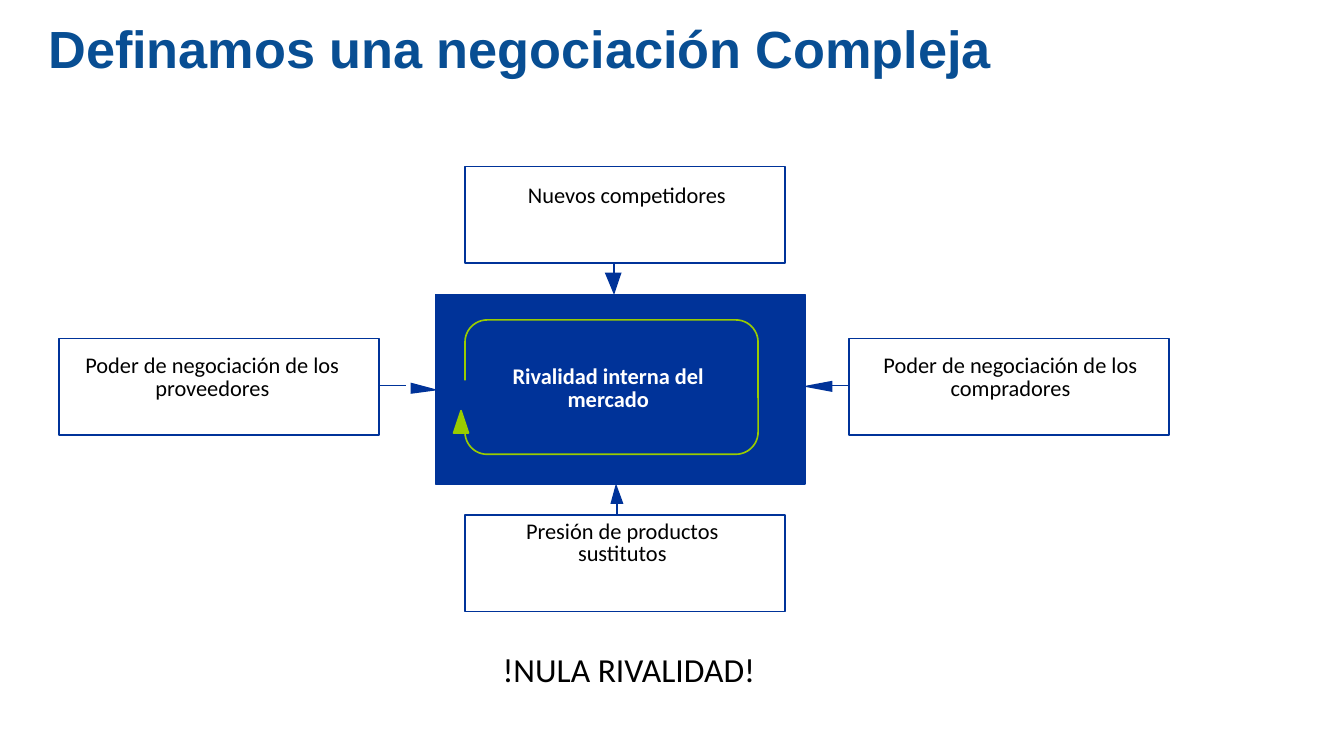
from lxml import etree
from pptx import Presentation
from pptx.dml.color import RGBColor
from pptx.enum import shapes, text
from pptx.oxml import ns
from pptx.util import Pt

NAVY = RGBColor(0x00, 0x33, 0x99)
TITLE_BLUE = RGBColor(0x08, 0x4E, 0x93)
LIME = RGBColor(0x99, 0xCC, 0x00)
WHITE = RGBColor(0xFF, 0xFF, 0xFF)
BLACK = RGBColor(0, 0, 0)
LINE_WIDTH = 0.88

TITLE = "Definamos una negociación Compleja"
CONCLUSION = "!NULA RIVALIDAD!"
CORE = (233.3, 157.7, 198, 101.5)
LOOP = (249.1, 171.4, 157, 72)
LOOP_GAP = (243.4, 203.8, 10.8, 23.8)
LOOP_HEAD = [(247, 220.3), (251.3, 231.8), (242.6, 231.8)]

FORCE_SIZE = (171.4, 51.8)
FORCES = [  # left and top of each box
    (31.7, 181.4),
    (455, 181.4),
    (249.1, 275.8),
    (249.1, 89.3),
]
LABELS = [  # wording, frame, line spacing, colour, bold
    ("Nuevos competidores", (263.5, 97.2, 144.7, 14.4), None, BLACK, False),
    ("Rivalidad interna del mercado", (257.8, 196.6, 136.1, 24.5), 12, WHITE, True),
    ("Presión de productos sustitutos", (257.8, 279.4, 151.2, 24.5), 12, BLACK, False),
    ("Poder de negociación de los proveedores", (38.2, 190.8, 151.2, 24.5), 12, BLACK, False),
    ("Poder de negociación de los compradores", (469.4, 190.8, 144, 24.5), 12, BLACK, False),
]
ARROWS = [  # triangle with its tip first, then the two ends of the shaft
    ([(235.4, 208.8), (220.3, 211.3), (220.3, 205.2)], (203, 206.6), (217.4, 206.6)),
    ([(329, 157.7), (324.2, 146.2), (332.8, 146.2)], (329, 140.4), (329, 146.2)),
    ([(430, 206.6), (445.7, 203.8), (445.7, 209.5)], (455, 206.6), (445.7, 206.6)),
    ([(330.5, 258.7), (334.1, 270), (326.9, 270)], (330.5, 275.2), (330.5, 270)),
]


def paint(shape, fill=None, line=None):
    shape.shadow.inherit = False
    if fill is None:
        shape.fill.background()
    else:
        shape.fill.solid()
        shape.fill.fore_color.rgb = fill
    if line is None:
        shape.line.fill.background()
    else:
        shape.line.color.rgb = line
        shape.line.width = Pt(LINE_WIDTH)


def add_box(page, frame, fill=None, line=None, kind=shapes.MSO_SHAPE.RECTANGLE):
    box = page.shapes.add_shape(kind, *map(Pt, frame))
    paint(box, fill, line)
    return box


def add_triangle(page, points, fill, line=None):
    builder = page.shapes.build_freeform(*points[0], scale=Pt(1))
    builder.add_line_segments(points[1:], close=True)
    paint(builder.convert_to_shape(), fill, line)


def add_shaft(page, start, end):
    shaft = page.shapes.add_connector(
        shapes.MSO_CONNECTOR.STRAIGHT, *map(Pt, start + end))
    shaft.line.color.rgb = NAVY
    shaft.line.width = Pt(LINE_WIDTH)
    etree.SubElement(shaft._element.spPr, ns.qn("a:effectLst"))


def add_text(page, wording, frame, size, color, font="Calibri", bold=False,
             spacing=None, align=text.PP_ALIGN.CENTER, inset=0,
             anchor=text.MSO_ANCHOR.TOP):
    body = page.shapes.add_textbox(*map(Pt, frame)).text_frame
    body.word_wrap = True
    body.vertical_anchor = anchor
    body.margin_left = body.margin_right = Pt(2 * inset)
    body.margin_top = body.margin_bottom = Pt(inset)
    para = body.paragraphs[0]
    para.alignment = align
    if spacing:
        para.line_spacing = Pt(spacing)
    span = para.add_run()
    span.text = wording
    span.font.name = font
    span.font.size = Pt(size)
    span.font.bold = bold
    span.font.color.rgb = color


def main():
    deck = Presentation()
    deck.slide_width, deck.slide_height = Pt(720), Pt(405)
    page = deck.slides.add_slide(deck.slide_layouts[6])

    add_text(page, TITLE, (25.9, 10.1, 624.2, 32.4), 28, TITLE_BLUE, "Arial", True,
             32.1, text.PP_ALIGN.LEFT, anchor=text.MSO_ANCHOR.MIDDLE)
    for corner in FORCES:
        add_box(page, corner + FORCE_SIZE, line=NAVY)
    add_box(page, CORE, NAVY, NAVY)
    loop = add_box(page, LOOP, line=LIME, kind=shapes.MSO_SHAPE.ROUNDED_RECTANGLE)
    loop.adjustments[0] = 0.165
    add_box(page, LOOP_GAP, NAVY)
    add_triangle(page, LOOP_HEAD, LIME, LIME)

    for head, start, end in ARROWS:
        add_triangle(page, head, NAVY)
        add_shaft(page, start, end)
    for wording, frame, spacing, color, bold in LABELS:
        add_text(page, wording, frame, 12, color, bold=bold, spacing=spacing)
    add_text(page, CONCLUSION, (212.4, 344.2, 249.1, 28.8), 18, BLACK, inset=3.6)
    deck.save("out.pptx")


if __name__ == "__main__":
    main()
